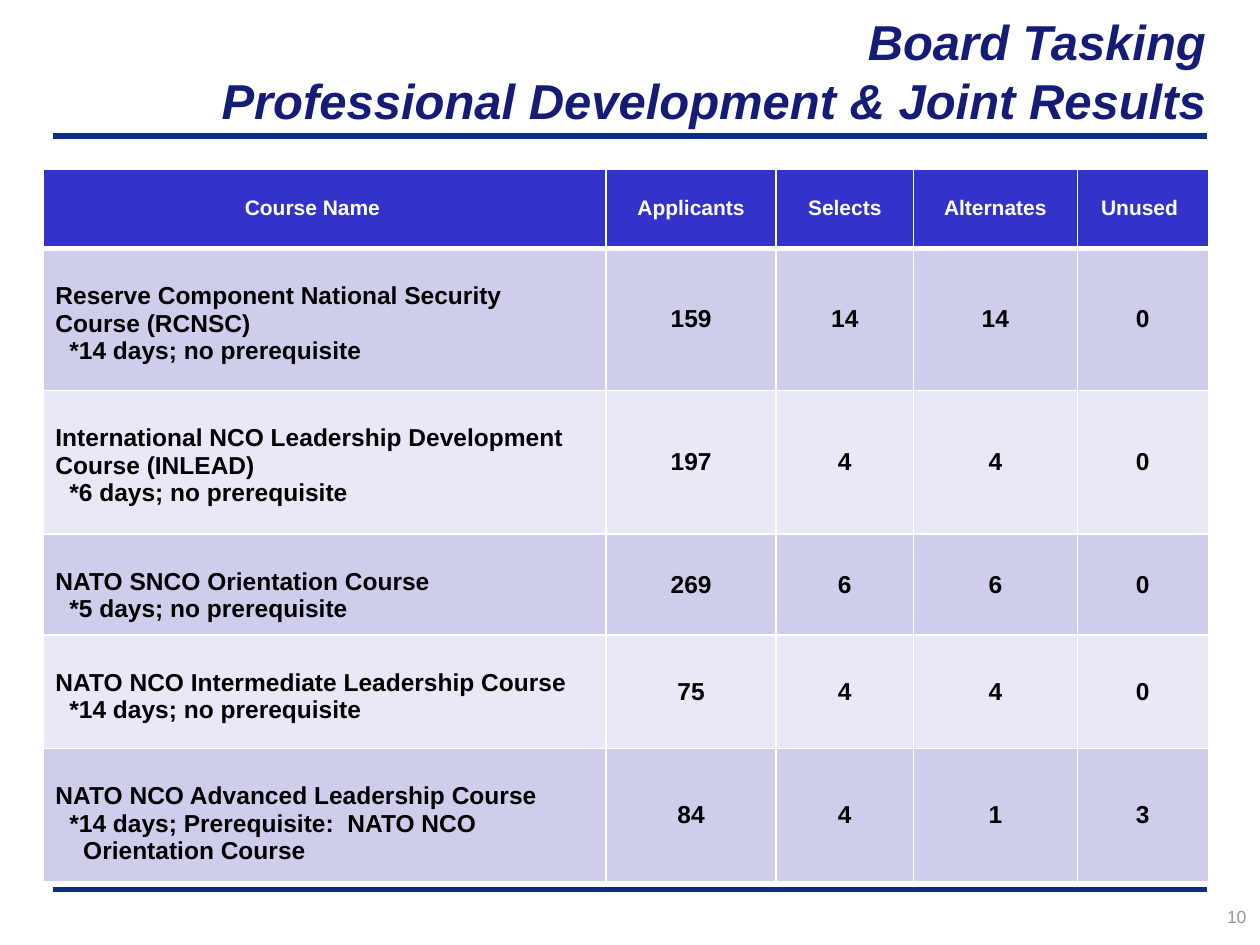
from lxml import etree
from pptx import Presentation, util as u
from pptx.dml.color import RGBColor
from pptx.enum import shapes, text
from pptx.oxml.ns import qn

NAVY = RGBColor(0x15, 0x1C, 0x77)
RULE_BLUE = RGBColor(0x0C, 0x2D, 0x83)
HEADER_BLUE = RGBColor(0x33, 0x33, 0xCC)
BANDS = [RGBColor(0xCE, 0xCE, 0xEC), RGBColor(0xE8, 0xE8, 0xF6)]
WHITE = RGBColor(0xFF, 0xFF, 0xFF)
BLACK = RGBColor(0, 0, 0)
GREY = RGBColor(0x96, 0x96, 0x96)

FONT = "Arial"
WIDTH, HEIGHT = 10, 7.5
MARGIN = 0.042  # share of the slide's width
COLUMNS = [4.47, 1.35, 1.09, 1.3, 1.04]
ROWS = [0.63, 1.13, 1.14, 0.8, 0.9, 1.06]
INDENT = 0.11

# Heading and extra right inset, which moves centred text left
HEADINGS = [("Course Name", 0.19), ("Applicants", 0), ("Selects", 0),
            ("Alternates", 0), ("Unused", 0.05)]
# Course lines as (text, indent level), then the four counts
COURSES = [
    ([("Reserve Component National Security Course (RCNSC)", 0),
      ("*14 days; no prerequisite", 1)], [159, 14, 14, 0]),
    ([("International NCO Leadership Development Course (INLEAD)", 0),
      ("*6 days; no prerequisite", 1)], [197, 4, 4, 0]),
    ([("NATO SNCO Orientation Course", 0),
      ("*5 days; no prerequisite", 1)], [269, 6, 6, 0]),
    ([("NATO NCO Intermediate Leadership Course", 0),
      ("*14 days; no prerequisite", 1)], [75, 4, 4, 0]),
    ([("NATO NCO Advanced Leadership Course", 0),
      ("*14 days; Prerequisite:  NATO NCO", 1),
      ("Orientation Course", 2)], [84, 4, 1, 3]),
]


def add_span(para, words, size, color, bold=False, italic=False):
    span = para.add_run()
    span.text = words
    font = span.font
    font.name, font.size, font.color.rgb = FONT, u.Pt(size), color
    font.bold, font.italic = bold, italic


def add_rule(page, share):
    y = u.Inches(HEIGHT * share)
    rule = page.shapes.add_connector(
        shapes.MSO_CONNECTOR.STRAIGHT,
        u.Inches(WIDTH * MARGIN), y, u.Inches(WIDTH * (1 - MARGIN)), y)
    rule.line.color.rgb = RULE_BLUE
    rule.line.width = u.Pt(3)
    etree.SubElement(rule._element.spPr, qn("a:effectLst"))


def fill_title(page, lines):
    title = page.shapes.title
    title.left, title.top = u.Inches(0.75), u.Inches(0.04)
    title.width, title.height = u.Inches(8.92), u.Inches(1.25)
    frame = title.text_frame
    frame.auto_size = text.MSO_AUTO_SIZE.NONE
    frame.vertical_anchor = text.MSO_ANCHOR.TOP
    para = frame.paragraphs[0]
    para.alignment = text.PP_ALIGN.RIGHT
    para.line_spacing = 1.0
    for index, line in enumerate(lines):
        if index:
            para.add_line_break()
        add_span(para, line, 28, NAVY, bold=True, italic=True)


def set_borders(cell, top, bottom):
    properties = cell._tc.get_or_add_tcPr()
    for index, (side, width) in enumerate(
            [("lnL", 1), ("lnR", 1), ("lnT", top), ("lnB", bottom)]):
        border = etree.Element(qn(f"a:{side}"), w=str(u.Pt(width)))
        fill = etree.SubElement(border, qn("a:solidFill"))
        etree.SubElement(fill, qn("a:srgbClr"), val=str(WHITE))
        properties.insert(index, border)


def style_cell(cell, color, top=1, bottom=1):
    cell.fill.solid()
    cell.fill.fore_color.rgb = color
    set_borders(cell, top, bottom)


def fill_centred(cell, words, size, color):
    cell.vertical_anchor = text.MSO_ANCHOR.MIDDLE
    para = cell.text_frame.paragraphs[0]
    para.alignment = text.PP_ALIGN.CENTER
    add_span(para, words, size, color, bold=True)


def fill_course(cell, lines):
    cell.margin_top = u.Inches(0.27)
    cell.margin_right = u.Inches(0.2)
    frame = cell.text_frame
    for index, (words, level) in enumerate(lines):
        para = frame.add_paragraph() if index else frame.paragraphs[0]
        para._p.get_or_add_pPr().set("marL", str(u.Inches(level * INDENT)))
        add_span(para, words, 14, BLACK, bold=True)


def add_results(page):
    table = page.shapes.add_table(
        len(ROWS), len(COLUMNS), u.Inches(0.34), u.Inches(1.34),
        u.Inches(sum(COLUMNS)), u.Inches(sum(ROWS))).table
    for column, width in zip(table.columns, COLUMNS):
        column.width = u.Inches(width)
    for row, height in zip(table.rows, ROWS):
        row.height = u.Inches(height)

    # Header row
    for cell, (heading, inset) in zip(table.rows[0].cells, HEADINGS):
        style_cell(cell, HEADER_BLUE, bottom=3)
        cell.margin_right = u.Inches(0.1 + inset)
        fill_centred(cell, heading, 12, WHITE)

    # One banded row for each course; the first shares the header's thick edge
    for index, (lines, counts) in enumerate(COURSES):
        cells = list(table.rows[index + 1].cells)
        for cell in cells:
            style_cell(cell, BANDS[index % 2], top=1 if index else 3)
        fill_course(cells[0], lines)
        for cell, count in zip(cells[1:], counts):
            fill_centred(cell, str(count), 14, BLACK)


def add_page_number(page, number):
    box = page.shapes.add_textbox(
        u.Inches(8.74), u.Inches(7.14), u.Inches(1.25), u.Inches(0.33))
    box.text_frame.word_wrap = True
    para = box.text_frame.paragraphs[0]
    para.alignment = text.PP_ALIGN.RIGHT
    add_span(para, number, 10, GREY)


def main():
    deck = Presentation()
    deck.slide_width, deck.slide_height = u.Inches(WIDTH), u.Inches(HEIGHT)
    page = deck.slides.add_slide(deck.slide_layouts[5])
    # Rules below the title and below the table
    for share in (0.144, 0.941):
        add_rule(page, share)
    fill_title(page, ["Board Tasking",
                      "Professional Development & Joint Results"])
    add_results(page)
    add_page_number(page, "10")
    deck.save("out.pptx")


if __name__ == "__main__":
    main()
